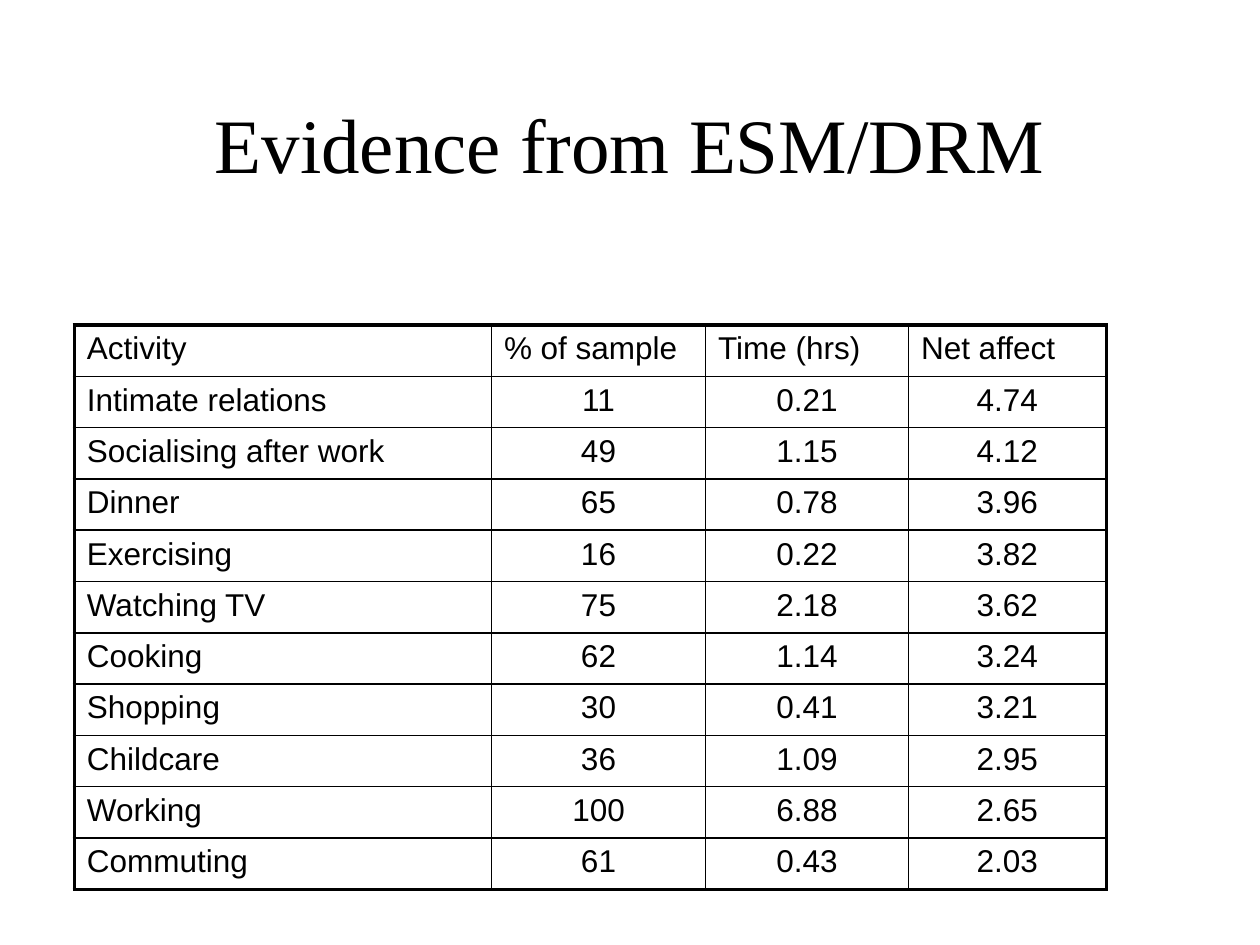
from lxml.etree import SubElement
from pptx import Presentation
from pptx.dml.color import RGBColor
from pptx.enum.text import MSO_ANCHOR, PP_ALIGN
from pptx.oxml.ns import qn
from pptx.util import Inches, Pt

TITLE = "Evidence from ESM/DRM"
HEAD = ("Activity", "% of sample", "Time (hrs)", "Net affect")
ROWS = [
    ("Intimate relations", "11", "0.21", "4.74"),
    ("Socialising after work", "49", "1.15", "4.12"),
    ("Dinner", "65", "0.78", "3.96"),
    ("Exercising", "16", "0.22", "3.82"),
    ("Watching TV", "75", "2.18", "3.62"),
    ("Cooking", "62", "1.14", "3.24"),
    ("Shopping", "30", "0.41", "3.21"),
    ("Childcare", "36", "1.09", "2.95"),
    ("Working", "100", "6.88", "2.65"),
    ("Commuting", "61", "0.43", "2.03"),
]
COLORS = {"ink": "000000", "paper": "FFFFFF"}
WIDTHS = (3.31, 1.7, 1.61, 1.57)
LEFT, TOP, HEIGHT = 0.59, 2.58, 4.48
THIN, THICK = 1, 2.25


def write(frame, text, font, size, align):
    para = frame.paragraphs[0]
    para.alignment = align
    run = para.add_run()
    run.text = text
    run.font.name = font
    run.font.size = Pt(size)
    run.font.color.rgb = RGBColor.from_string(COLORS["ink"])


def rule(cell, edges):
    """Draw cell borders; edges maps a side (L, R, T, B) to points."""
    props = cell._tc.get_or_add_tcPr()
    for spot, (side, width) in enumerate(edges.items()):
        line = props.makeelement(qn(f"a:ln{side}"), {"w": str(Pt(width))})
        fill = SubElement(line, qn("a:solidFill"))
        SubElement(fill, qn("a:srgbClr"), val=COLORS["ink"])
        props.insert(spot, line)


def add_title(slide):
    box = slide.shapes.add_textbox(Inches(0.5), Inches(0.3), Inches(9), Inches(1.25))
    frame = box.text_frame
    frame.word_wrap = True
    frame.vertical_anchor = MSO_ANCHOR.BOTTOM
    write(frame, TITLE, "Times New Roman", 44, PP_ALIGN.CENTER)


def add_grid(slide):
    data = [HEAD, *ROWS]
    last, end = len(data) - 1, len(HEAD) - 1
    table = slide.shapes.add_table(
        len(data), len(HEAD), Inches(LEFT), Inches(TOP),
        Inches(sum(WIDTHS)), Inches(HEIGHT)).table
    table.first_row = table.horz_banding = False
    for col, width in zip(table.columns, WIDTHS):
        col.width = Inches(width)
    for r, row in enumerate(data):
        for c, text in enumerate(row):
            cell = table.cell(r, c)
            cell.fill.solid()
            cell.fill.fore_color.rgb = RGBColor.from_string(COLORS["paper"])
            align = PP_ALIGN.CENTER if r and c else PP_ALIGN.LEFT
            write(cell.text_frame, text, "Arial", 18, align)
            outer = {"L": c == 0, "R": c == end, "T": r == 0, "B": r == last}
            rule(cell, {side: THICK if out else THIN for side, out in outer.items()})


def main():
    deck = Presentation()
    deck.slide_width, deck.slide_height = Inches(10), Inches(7.5)
    slide = deck.slides.add_slide(deck.slide_layouts[6])
    add_title(slide)
    add_grid(slide)
    deck.save("out.pptx")


if __name__ == "__main__":
    main()
